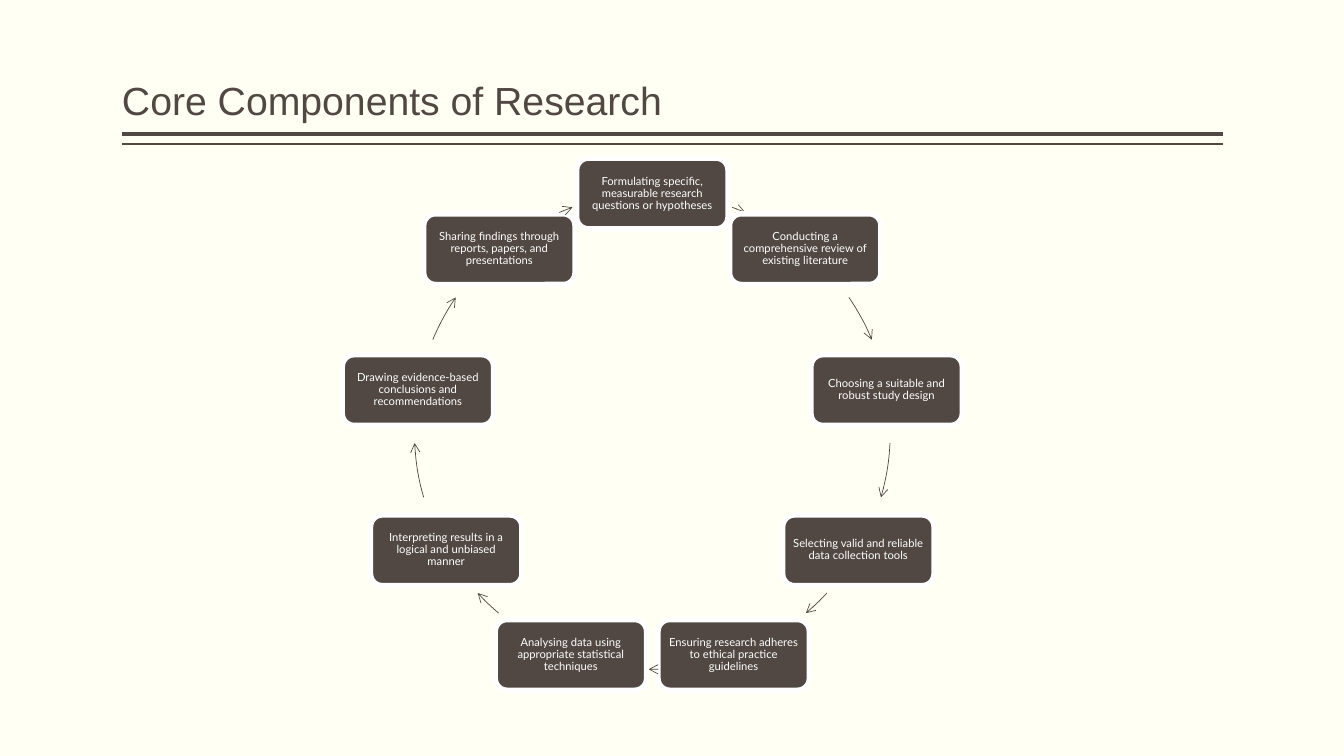
from lxml import etree
from pptx import Presentation
from pptx.dml.color import RGBColor
from pptx.enum.shapes import MSO_CONNECTOR, MSO_SHAPE
from pptx.enum.text import MSO_ANCHOR, MSO_AUTO_SIZE, PP_ALIGN
from pptx.oxml.ns import qn
from pptx.util import Pt
from math import cos, radians, sin

EMU_PER_PX = 9144  # 100 px to the inch
STRAIGHT = MSO_CONNECTOR.STRAIGHT
ROUNDED, ARC = MSO_SHAPE.ROUNDED_RECTANGLE, MSO_SHAPE.ARC
MIDDLE, BOTTOM = MSO_ANCHOR.MIDDLE, MSO_ANCHOR.BOTTOM
LEFT, CENTER = PP_ALIGN.LEFT, PP_ALIGN.CENTER
NO_AUTOFIT = MSO_AUTO_SIZE.NONE

BROWN, WHITE, CREAM = "514843", "FFFFFF", "FFFFF3"

STEPS = [
    "Formulating specific, measurable research questions or hypotheses",
    "Conducting a comprehensive review of existing literature",
    "Choosing a suitable and robust study design",
    "Selecting valid and reliable data collection tools",
    "Ensuring research adheres to ethical practice guidelines",
    "Analysing data using appropriate statistical techniques",
    "Interpreting results in a logical and unbiased manner",
    "Drawing evidence-based conclusions and recommendations",
    "Sharing findings through reports, papers, and presentations",
]
CENTER_X, CENTER_Y, RADIUS = 647, 428, 236
BOX_WIDTH, BOX_HEIGHT = 150, 70

# Arrow spans in degrees clockwise from the top; the left half mirrors the right.
RIGHT_ARROWS = [(19.6, 23), (55.7, 67.3), (92.8, 106.1), (132.8, 139.8)]
BOTTOM_ARROW = (179.1, 180.9)
LEFT_ARROWS = [(360 - end, 360 - start) for start, end in reversed(RIGHT_ARROWS)]
ARROWS = RIGHT_ARROWS + [BOTTOM_ARROW] + LEFT_ARROWS


def px(length):
    return round(length * EMU_PER_PX)


def color(hex_string):
    return RGBColor.from_string(hex_string)


class SlideBuilder:
    def __init__(self, presentation, background):
        self.slide = presentation.slides.add_slide(presentation.slide_layouts[5])
        self.shapes = self.slide.shapes
        self.slide.background.fill.solid()
        self.slide.background.fill.fore_color.rgb = color(background)

    def set_text(self, shape, text, font, hex_string, margins, anchor, alignment):
        """Fill the shape with text; margins are (horizontal, vertical) in px."""
        frame = shape.text_frame
        frame.text = text
        horizontal, vertical = map(px, margins)
        frame_format = {
            "word_wrap": True, "auto_size": NO_AUTOFIT, "vertical_anchor": anchor,
            "margin_left": horizontal, "margin_right": horizontal,
            "margin_top": vertical, "margin_bottom": vertical,
        }
        for name, value in frame_format.items():
            setattr(frame, name, value)
        paragraph = frame.paragraphs[0]
        paragraph.alignment = alignment
        paragraph.line_spacing = 0.9
        run_font = paragraph.runs[0].font
        for name, value in font.items():
            setattr(run_font, name, value)
        run_font.color.rgb = color(hex_string)

    def outline(self, shape, hex_string, width):
        shape.line.color.rgb = color(hex_string)
        shape.line.width = Pt(width)

    def title(self, text, left, top, width, height):
        title = self.shapes.title
        title.left, title.top = px(left), px(top)
        title.width, title.height = px(width), px(height)
        self.set_text(title, text, {"name": "Arial", "size": Pt(28)}, BROWN,
                      (0, 5), BOTTOM, LEFT)

    def rule(self, left, right, y, width):
        line = self.shapes.add_connector(STRAIGHT, px(left), px(y), px(right), px(y))
        self.outline(line, BROWN, width)
        etree.SubElement(line._element.spPr, qn("a:effectLst"))

    def step_box(self, text, center_x, center_y):
        box = self.shapes.add_shape(
            ROUNDED, px(center_x - BOX_WIDTH / 2), px(center_y - BOX_HEIGHT / 2),
            px(BOX_WIDTH), px(BOX_HEIGHT))
        box.shadow.inherit = False
        box.fill.solid()
        box.fill.fore_color.rgb = color(BROWN)
        self.outline(box, WHITE, 3.78)
        self.set_text(box, text, {"name": "Lato", "size": Pt(8)}, WHITE,
                      (3, 3), MIDDLE, CENTER)

    def arc_arrow(self, start, end):
        """Draw an arrow along the cycle, in degrees clockwise from the top."""
        arc = self.shapes.add_shape(
            ARC, px(CENTER_X - RADIUS), px(CENTER_Y - RADIUS),
            px(2 * RADIUS), px(2 * RADIUS))
        arc.shadow.inherit = False
        arc.fill.background()
        for index, angle in enumerate((start, end)):
            # Preset angles run from the right, in units of 1/0.6 degree.
            arc.adjustments[index] = (angle - 90) % 360 * 0.6
        self.outline(arc, BROWN, 0.5)
        line = arc._element.spPr.find(qn("a:ln"))
        etree.SubElement(line, qn("a:tailEnd"), type="arrow")


def main():
    presentation = Presentation()
    presentation.slide_width, presentation.slide_height = px(1333), px(750)
    builder = SlideBuilder(presentation, CREAM)
    builder.title("Core Components of Research", 121, 8, 1092, 120)
    for y, width in ((133, 3), (143, 1)):
        builder.rule(121, 1213, y, width)
    for index, (text, arrow) in enumerate(zip(STEPS, ARROWS)):
        angle = radians(index * 360 / len(STEPS))
        builder.step_box(text, CENTER_X + RADIUS * sin(angle),
                         CENTER_Y - RADIUS * cos(angle))
        builder.arc_arrow(*arrow)
    presentation.save("out.pptx")


if __name__ == "__main__":
    main()
